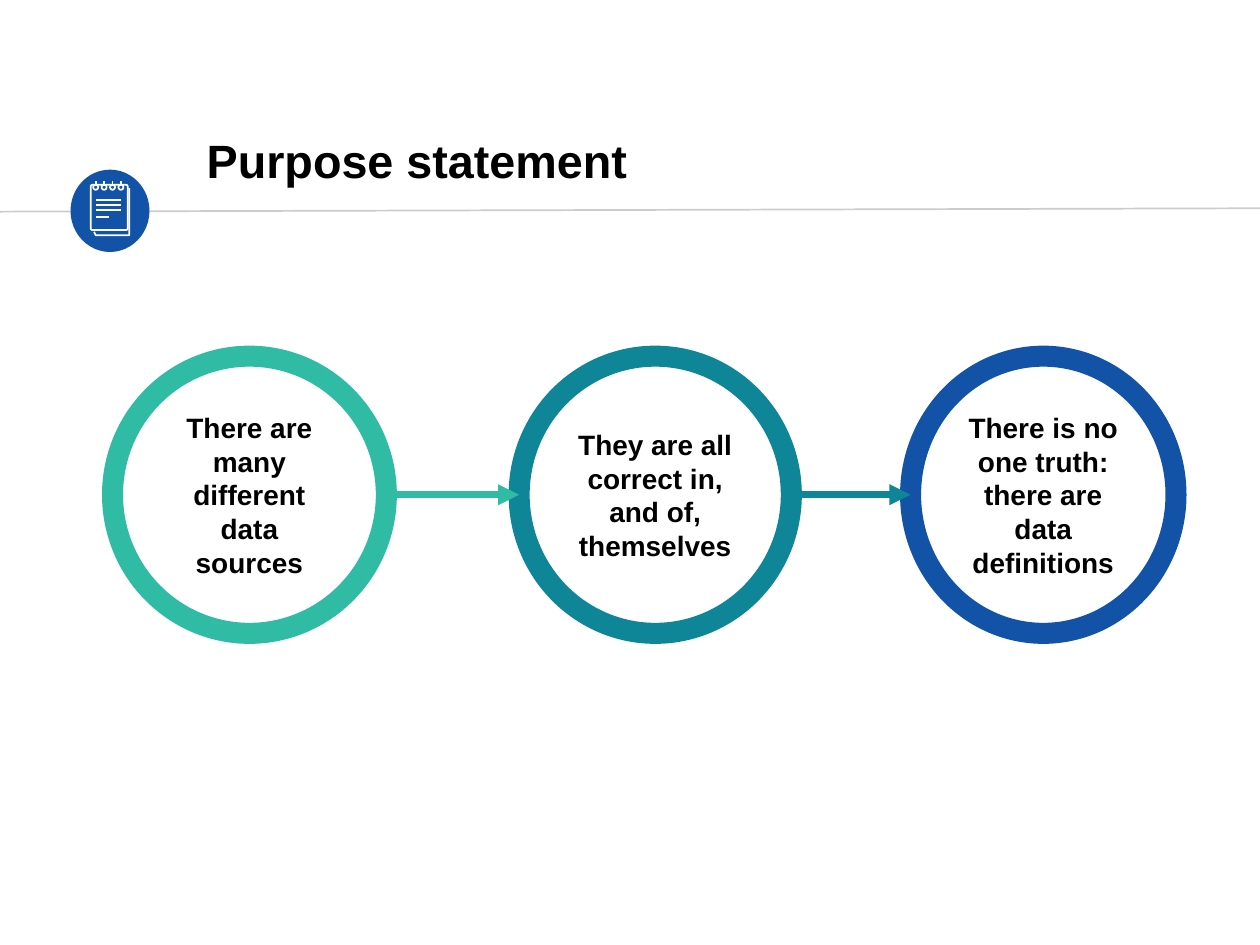
from pptx import Presentation, util as u
from pptx.dml.color import RGBColor
from pptx.enum import shapes as kinds, text
from pptx.oxml import parse_xml
from pptx.oxml.ns import nsdecls

WIDTH = 7.5
HEIGHT = WIDTH * 3 / 4
FONT = "Arial"
INSET = 0.07
COLORS = {"ink": "000000", "white": "FFFFFF", "rule": "CCCCCC",
          "green": "30BBA5", "teal": "0F8698", "blue": "1253A8"}

TITLE = "Purpose statement"
# text, colour, left edge, width
STEPS = [
    ("There are many different data sources", "green", 0.67, 1.63),
    ("They are all correct in, and of, themselves", "teal", 3.09, 1.62),
    ("There is no one truth: there are data definitions", "blue", 5.42, 1.58),
]
RING_TOP, RING_HEIGHT = 2.12, 1.65

# Notepad icon
PAGE = (0.54, 1.1, 0.22, 0.27)
BACK_PAGE = [(0.56, 1.38), (0.57, 1.4), (0.77, 1.4), (0.77, 1.12)]
TEXT_LEFT = 0.57
TEXT_LINES = [(1.19, 0.15), (1.22, 0.15), (1.25, 0.15), (1.29, 0.08)]  # top, length
BINDING_LEFT, BINDING_STEP, BINDING_COUNT = 0.57, 0.05, 4
BINDING_TOP, HOLE_TOP, HOLE_SIZE = 1.08, 1.1, 0.03

deck = Presentation()
deck.slide_width, deck.slide_height = u.Inches(WIDTH), u.Inches(HEIGHT)
slide = deck.slides.add_slide(deck.slide_layouts[6])


def rgb(name):
    return RGBColor.from_string(COLORS[name])


def paint(shape, fill=None, line=None, weight=0.75):
    shape.shadow.inherit = False
    if fill:
        shape.fill.solid()
        shape.fill.fore_color.rgb = rgb(fill)
    else:
        shape.fill.background()
    if line:
        shape.line.color.rgb = rgb(line)
        shape.line.width = u.Pt(weight)
    else:
        shape.line.fill.background()


def add_preset(kind, left, top, width, height, **style):
    shape = slide.shapes.add_shape(kind, *map(u.Inches, (left, top, width, height)))
    paint(shape, **style)
    return shape


def add_line(x1, y1, x2, y2, color, weight=0.75, arrow=False):
    line = slide.shapes.add_connector(kinds.MSO_CONNECTOR.STRAIGHT,
                                      *map(u.Inches, (x1, y1, x2, y2)))
    line.line.color.rgb = rgb(color)
    line.line.width = u.Pt(weight)
    if arrow:
        line.line._get_or_add_ln().append(
            parse_xml(f'<a:tailEnd {nsdecls("a")} type="triangle"/>'))
    line._element.spPr.append(parse_xml(f'<a:effectLst {nsdecls("a")}/>'))


def write(shape, words, size, align):
    """Fill a shape with one bold, vertically centred paragraph."""
    frame = shape.text_frame
    frame.word_wrap = True
    frame.vertical_anchor = text.MSO_ANCHOR.MIDDLE
    frame.margin_left = frame.margin_right = u.Inches(INSET)
    frame.margin_top = frame.margin_bottom = u.Inches(INSET)
    para = frame.paragraphs[0]
    para.alignment = align
    span = para.add_run()
    span.text = words
    span.font.name, span.font.size, span.font.bold = FONT, u.Pt(size), True
    span.font.color.rgb = rgb("ink")


def add_notepad():
    points = [(u.Inches(x), u.Inches(y)) for x, y in BACK_PAGE]
    builder = slide.shapes.build_freeform(*points[0])
    builder.add_line_segments(points[1:], close=False)
    paint(builder.convert_to_shape(), line="white")
    page = add_preset(kinds.MSO_SHAPE.ROUNDED_RECTANGLE, *PAGE, line="white")
    page.adjustments[0] = 0.05
    for y, length in TEXT_LINES:
        add_line(TEXT_LEFT, y, TEXT_LEFT + length, y, "white")
    for column in range(BINDING_COUNT):
        x = BINDING_LEFT + column * BINDING_STEP
        add_preset(kinds.MSO_SHAPE.OVAL, x - HOLE_SIZE / 2, HOLE_TOP,
                   HOLE_SIZE, HOLE_SIZE, line="white")
        add_line(x, BINDING_TOP, x, BINDING_TOP + 0.03, "white")


add_line(0, 1.26, WIDTH, 1.24, "rule")
add_preset(kinds.MSO_SHAPE.OVAL, 0.42, 1.01, 0.47, 0.49, fill="blue")
title = slide.shapes.add_textbox(*map(u.Inches, (1.16, 0.77, 3.18, 0.36)))
write(title, TITLE, 20, text.PP_ALIGN.LEFT)

for words, color, left, width in STEPS:
    ring = add_preset(kinds.MSO_SHAPE.OVAL, left, RING_TOP, width, RING_HEIGHT,
                      line=color, weight=9)
    write(ring, words, 12, text.PP_ALIGN.CENTER)

middle = RING_TOP + RING_HEIGHT / 2
for (_, color, left, width), following in zip(STEPS, STEPS[1:]):
    add_line(left + width, middle, following[2], middle, color, weight=3, arrow=True)

add_notepad()
deck.save("out.pptx")
